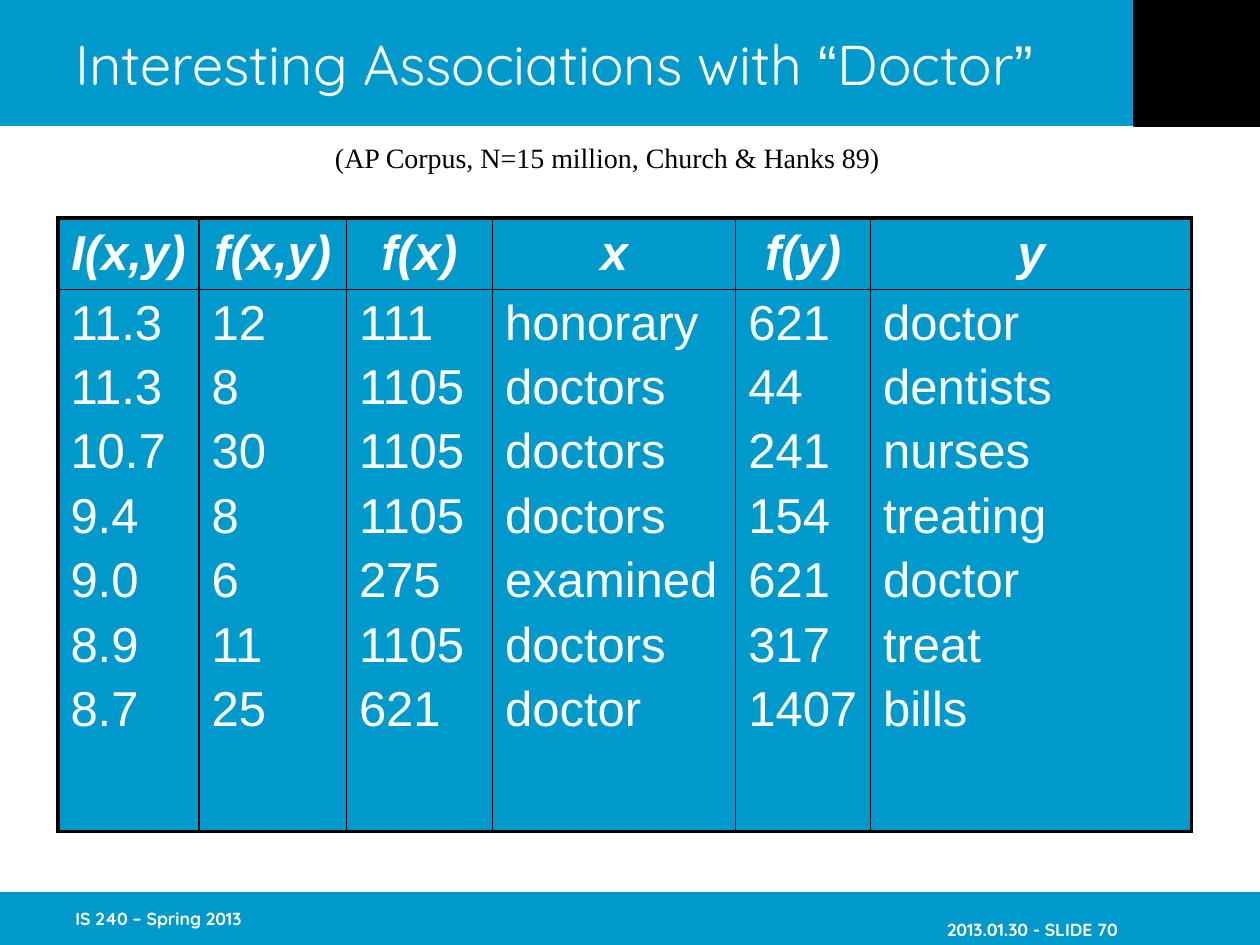
import pptx
import pptx.dml.color
import pptx.enum.shapes
import pptx.enum.text
import pptx.oxml
import pptx.oxml.ns
import pptx.util
from pptx.util import Inches

BLUE, BLACK, WHITE = "0099CC", "000000", "FFFFFF"
ALIGN = pptx.enum.text.PP_ALIGN
MIDDLE = pptx.enum.text.MSO_ANCHOR.MIDDLE

HEADERS = ["I(x,y)", "f(x,y)", "f(x)", "x", "f(y)", "y"]
ASSOCIATIONS = [
    ["11.3", "12", "111", "honorary", "621", "doctor"],
    ["11.3", "8", "1105", "doctors", "44", "dentists"],
    ["10.7", "30", "1105", "doctors", "241", "nurses"],
    ["9.4", "8", "1105", "doctors", "154", "treating"],
    ["9.0", "6", "275", "examined", "621", "doctor"],
    ["8.9", "11", "1105", "doctors", "317", "treat"],
    ["8.7", "25", "621", "doctor", "1407", "bills"],
]
COLUMN_WIDTHS = [1.12, 1.17, 1.16, 1.93, 1.07, 2.55]
ROW_HEIGHTS = [0.56, 4.3]


def rgb(value):
    return pptx.dml.color.RGBColor.from_string(value)


def style(font, size, name, color, bold=False, italic=False):
    font.size = pptx.util.Pt(size)
    font.name = name
    font.color.rgb = rgb(color)
    font.bold = bold
    font.italic = italic


def add_bar(page, left, top, width, height, color):
    bar = page.shapes.add_shape(
        pptx.enum.shapes.MSO_SHAPE.RECTANGLE,
        Inches(left), Inches(top), Inches(width), Inches(height))
    bar.shadow.inherit = False
    bar.fill.solid()
    bar.fill.fore_color.rgb = rgb(color)
    bar.line.fill.background()
    return bar


def add_footer(page, left, text, align, insets):
    box = page.shapes.add_textbox(
        Inches(left), Inches(7.08), Inches(2.08), Inches(0.42))
    frame = box.text_frame
    frame.word_wrap = True
    frame.vertical_anchor = MIDDLE
    frame.margin_left, frame.margin_top, frame.margin_right = map(Inches, insets)
    frame.text = text
    para = frame.paragraphs[0]
    para.alignment = align
    style(para.runs[0].font, 10, "Quicksand", WHITE, bold=True)


def add_title(page):
    title = page.shapes.title
    title.left, title.top = Inches(0.5), Inches(0)
    title.width, title.height = Inches(8.5), Inches(1)
    frame = title.text_frame
    frame.auto_size = pptx.enum.text.MSO_AUTO_SIZE.NONE
    frame.vertical_anchor = MIDDLE
    para = frame.paragraphs[0]
    para.alignment = ALIGN.LEFT
    for text, name in [("Interesting Associations with ", "Quicksand"),
                       ("“", "Arial"), ("Doctor", "Quicksand"), ("”", "Arial")]:
        span = para.add_run()
        span.text = text
        style(span.font, 32, name, WHITE)
    title.element.getparent().append(title.element)


def add_source(page):
    box = page.shapes.add_textbox(
        Inches(2.55), Inches(1.07), Inches(4.54), Inches(0.37))
    frame = box.text_frame
    frame.word_wrap = False
    frame.auto_size = pptx.enum.text.MSO_AUTO_SIZE.SHAPE_TO_FIT_TEXT
    frame.text = "(AP Corpus, N=15 million, Church & Hanks 89)"
    para = frame.paragraphs[0]
    para.alignment = ALIGN.CENTER
    style(para.runs[0].font, 16, "Times New Roman", BLACK)


def set_borders(cell, outer_sides):
    properties = cell._tc.get_or_add_tcPr()
    for side in "LRTB":
        width = pptx.util.Pt(2.25 if side in outer_sides else 1)
        properties.append(pptx.oxml.parse_xml(
            f'<a:ln{side} {pptx.oxml.ns.nsdecls("a")} w="{width}"><a:solidFill>'
            f'<a:srgbClr val="{BLACK}"/></a:solidFill></a:ln{side}>'))


def fill_cell(cell, lines, header):
    frame = cell.text_frame
    frame.text = "\n".join(lines)
    for index, para in enumerate(frame.paragraphs):
        para.alignment = ALIGN.CENTER if header else ALIGN.LEFT
        para.space_before = pptx.util.Pt(5.6 if index else 0)
        style(para.runs[0].font, 28, "Arial", WHITE, bold=header, italic=header)
    if header:
        cell.vertical_anchor = MIDDLE
    cell.fill.solid()
    cell.fill.fore_color.rgb = rgb(BLUE)


def add_associations(page):
    table = page.shapes.add_table(
        len(ROW_HEIGHTS), len(HEADERS), Inches(0.46), Inches(1.73),
        Inches(sum(COLUMN_WIDTHS)), Inches(sum(ROW_HEIGHTS))).table
    for row, height in zip(table.rows, ROW_HEIGHTS):
        row.height = Inches(height)
    last = len(HEADERS) - 1
    for index, (width, heading, values) in enumerate(
            zip(COLUMN_WIDTHS, HEADERS, zip(*ASSOCIATIONS))):
        table.columns[index].width = Inches(width)
        edge = {0: "L", last: "R"}.get(index, "")
        for row, (lines, side) in enumerate([([heading], "T"), (values, "B")]):
            cell = table.cell(row, index)
            set_borders(cell, edge + side)
            fill_cell(cell, lines, header=row == 0)


def main():
    deck = pptx.Presentation()
    deck.slide_width, deck.slide_height = Inches(10), Inches(7.5)
    page = deck.slides.add_slide(deck.slide_layouts[5])
    add_bar(page, 0, 0, 10, 1, BLUE)
    add_bar(page, 0, 7.08, 10, 0.42, BLUE)
    corner = add_bar(page, 9, 0, 1, 1, BLACK)
    corner.line.color.rgb = rgb(BLACK)
    corner.line.width = pptx.util.Pt(0.75)
    add_footer(page, 7.42, "2013.01.30 - SLIDE 70", ALIGN.RIGHT, (0, 0.23, 0.63))
    add_footer(page, 0.5, "IS 240 – Spring 2013", ALIGN.LEFT, (0.1, 0.05, 0))
    add_title(page)
    add_source(page)
    add_associations(page)
    deck.save("out.pptx")


if __name__ == "__main__":
    main()
